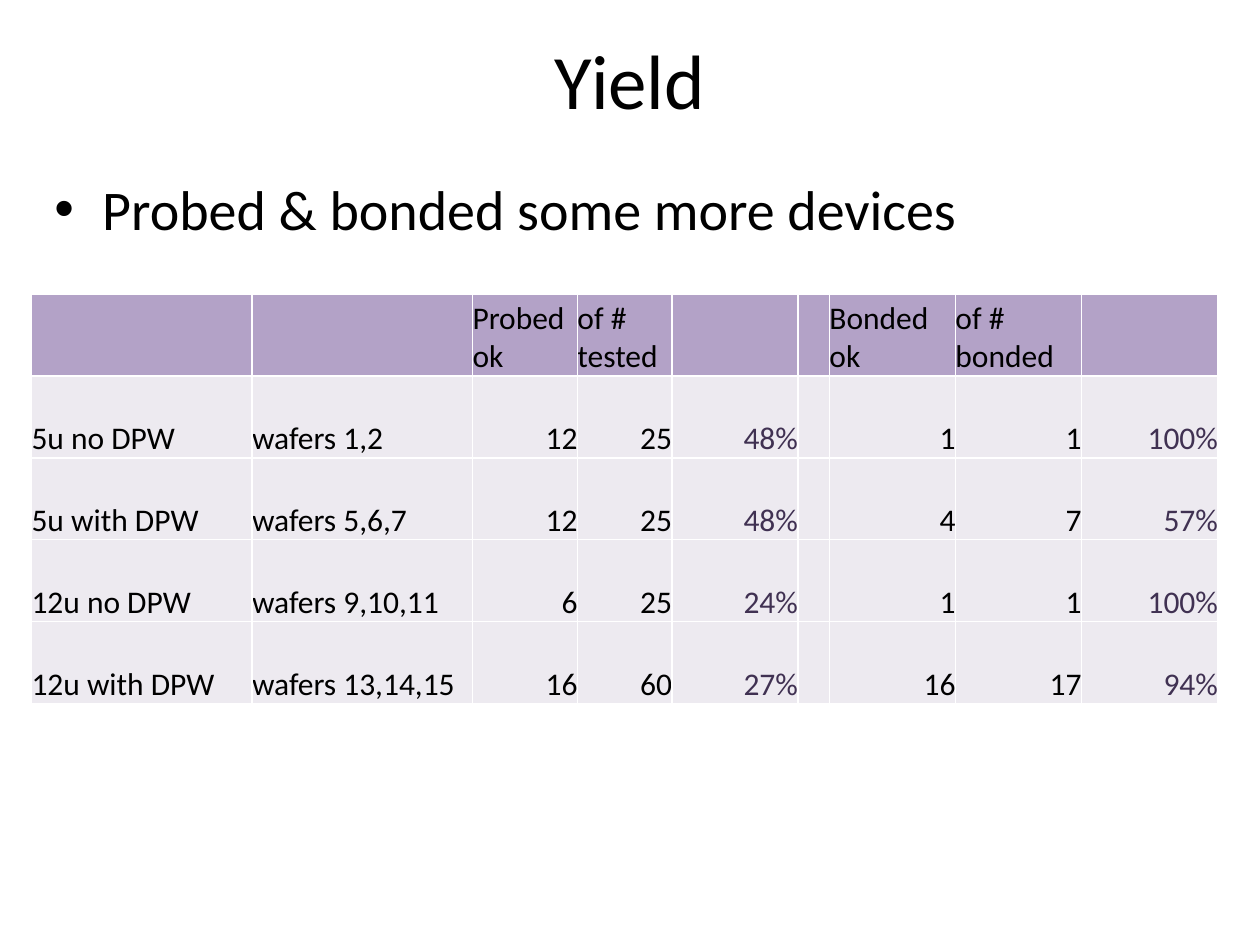
from dataclasses import dataclass

from lxml import etree
from pptx import Presentation, util as u
from pptx.dml.color import RGBColor
from pptx.enum import text
from pptx.oxml import ns

# The slide is a grid of 120 columns by 90 rows, twelve to the inch
UNIT = u.Inches(1) // 12
FONT = "Calibri"
BLACK = RGBColor(0x00, 0x00, 0x00)
WHITE = RGBColor(0xFF, 0xFF, 0xFF)
HEADER_PURPLE = RGBColor(0xB3, 0xA2, 0xC7)
PALE_PURPLE = RGBColor(0xED, 0xEA, 0xF0)
DARK_PURPLE = RGBColor(0x40, 0x31, 0x52)


@dataclass(frozen=True)
class Area:
    col: float
    row: float
    cols: float
    rows: float

    def emu(self) -> list[int]:
        return [round(n * UNIT) for n in (self.col, self.row, self.cols, self.rows)]


@dataclass(frozen=True)
class Column:
    heading: str
    cols: int
    align: text.PP_ALIGN = text.PP_ALIGN.RIGHT
    color: RGBColor = BLACK


COLUMNS = [
    Column("", 21, text.PP_ALIGN.LEFT),
    Column("", 21, text.PP_ALIGN.LEFT),
    Column("Probed ok", 10),
    Column("of # tested", 9),
    Column("", 12, color=DARK_PURPLE),
    Column("", 3),
    Column("Bonded ok", 12),
    Column("of # bonded", 12),
    Column("", 13, color=DARK_PURPLE),
]
YIELDS = [
    ("5u no DPW", "wafers 1,2", "12", "25", "48%", "", "1", "1", "100%"),
    ("5u with DPW", "wafers 5,6,7", "12", "25", "48%", "", "4", "7", "57%"),
    ("12u no DPW", "wafers 9,10,11", "6", "25", "24%", "", "1", "1", "100%"),
    ("12u with DPW", "wafers 13,14,15", "16", "60", "27%", "", "16", "17", "94%"),
]
ROW_HEIGHT = 7.8


def style(paragraph, size: float, align: text.PP_ALIGN, color: RGBColor = BLACK) -> None:
    paragraph.alignment = align
    paragraph.font.name = FONT
    paragraph.font.size = u.Pt(size)
    paragraph.font.color.rgb = color


def add_text(slide, area: Area, words: str, size: float, align: text.PP_ALIGN,
             anchor: text.MSO_ANCHOR):
    frame = slide.shapes.add_textbox(*area.emu()).text_frame
    frame.word_wrap = True
    frame.vertical_anchor = anchor
    frame.text = words
    style(frame.paragraphs[0], size, align)
    return frame.paragraphs[0]


def add_bullet(paragraph, indent: int) -> None:
    props = paragraph._p.get_or_add_pPr()
    props.set("marL", str(indent))
    props.set("indent", str(-indent))
    etree.SubElement(props, ns.qn("a:buFont")).set("typeface", "Arial")
    etree.SubElement(props, ns.qn("a:buChar")).set("char", "•")
    # Bullet elements come before the default run properties
    props.append(props.find(ns.qn("a:defRPr")))


def add_borders(cell) -> None:
    props = cell._tc.get_or_add_tcPr()
    for side in ("lnL", "lnR", "lnT", "lnB"):
        line = etree.SubElement(props, ns.qn(f"a:{side}"), w=str(u.Pt(1)))
        fill = etree.SubElement(line, ns.qn("a:solidFill"))
        etree.SubElement(fill, ns.qn("a:srgbClr"), val=str(WHITE))


def fill_cell(cell, words: str, align: text.PP_ALIGN, color: RGBColor,
              background: RGBColor) -> None:
    add_borders(cell)
    cell.fill.solid()
    cell.fill.fore_color.rgb = background
    cell.margin_left = cell.margin_right = cell.margin_top = cell.margin_bottom = 0
    cell.vertical_anchor = text.MSO_ANCHOR.BOTTOM
    cell.text = words
    style(cell.text_frame.paragraphs[0], 18, align, color)


def add_yield_table(slide, col: float, row: float) -> None:
    row_count = len(YIELDS) + 1
    area = Area(col, row, sum(c.cols for c in COLUMNS), row_count * ROW_HEIGHT)
    table = slide.shapes.add_table(row_count, len(COLUMNS), *area.emu()).table
    for table_row in table.rows:
        table_row.height = round(ROW_HEIGHT * UNIT)
    for c, column in enumerate(COLUMNS):
        table.columns[c].width = column.cols * UNIT
        fill_cell(table.cell(0, c), column.heading, text.PP_ALIGN.LEFT, BLACK, HEADER_PURPLE)
        for r, values in enumerate(YIELDS, start=1):
            fill_cell(table.cell(r, c), values[c], column.align, column.color, PALE_PURPLE)


def main() -> None:
    deck = Presentation()
    deck.slide_width, deck.slide_height = 120 * UNIT, 90 * UNIT
    slide = deck.slides.add_slide(deck.slide_layouts[6])

    # Title
    add_text(slide, Area(6, 0, 108, 15), "Yield", 44,
             text.PP_ALIGN.CENTER, text.MSO_ANCHOR.MIDDLE)

    # Summary bullet
    summary = add_text(slide, Area(4, 16, 108, 10), "Probed & bonded some more devices", 32,
                       text.PP_ALIGN.LEFT, text.MSO_ANCHOR.TOP)
    summary.space_before = u.Pt(6.4)
    add_bullet(summary, u.Inches(0.38))

    # Yield per wafer group
    add_yield_table(slide, 3, 28)

    deck.save("out.pptx")


if __name__ == "__main__":
    main()
